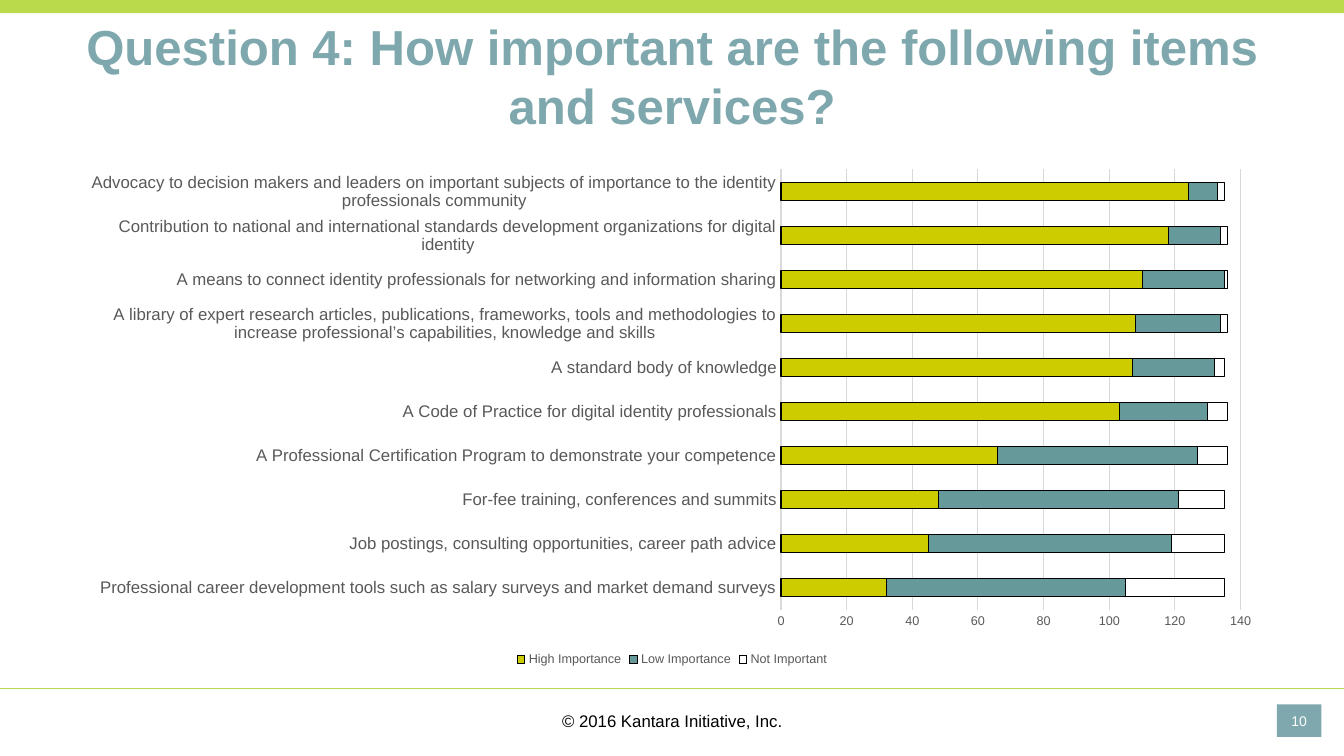
from lxml.etree import SubElement, fromstring
from pptx import Presentation
from pptx.chart.data import CategoryChartData
from pptx.dml.color import RGBColor
from pptx.enum.chart import XL_CHART_TYPE, XL_LEGEND_POSITION, XL_TICK_MARK
from pptx.enum.shapes import MSO_CONNECTOR, MSO_SHAPE
from pptx.enum.text import MSO_ANCHOR, PP_ALIGN
from pptx.oxml.ns import qn
from pptx.util import Cm, Pt

WIDTH, HEIGHT = 33.87, 19.05
LIME, TEAL, GREY, GRID = "BAD94B", "7EA8AD", "595959", "D9D9D9"

# Item, then answers of high, low and no importance, from bottom to top
ANSWERS = [
    ("Professional career development tools such as salary surveys and market demand surveys", 32, 73, 30),
    ("Job postings, consulting opportunities, career path advice", 45, 74, 16),
    ("For-fee training, conferences and summits", 48, 73, 14),
    ("A Professional Certification Program to demonstrate your competence", 66, 61, 9),
    ("A Code of Practice for digital identity professionals", 103, 27, 6),
    ("A standard body of knowledge", 107, 25, 3),
    ("A library of expert research articles, publications, frameworks, tools and methodologies "
     "to increase professional’s capabilities, knowledge and skills", 108, 26, 2),
    ("A means to connect identity professionals for networking and information sharing", 110, 25, 1),
    ("Contribution to national and international standards development organizations "
     "for digital identity", 118, 16, 2),
    ("Advocacy to decision makers and leaders on important subjects of importance "
     "to the identity professionals community", 124, 9, 2),
]
RATINGS = [("High Importance", "CCCC00"), ("Low Importance", "669999"), ("Not Important", "FFFFFF")]
PLOT_AREA = {"x": 0.59, "y": 0.02, "w": 0.38, "h": 0.86}


def rgb(hex_code):
    return RGBColor.from_string(hex_code)


class SlideBuilder:
    font_name = "Arial"

    def __init__(self, slide):
        self.slide = slide
        self.shapes = slide.shapes

    def style_font(self, font, size, color, bold=False):
        font.name, font.size, font.bold = self.font_name, Pt(size), bold
        font.color.rgb = rgb(color)

    def style_line(self, line, color, width):
        line.color.rgb = rgb(color)
        line.width = Pt(width)

    def fill_frame(self, frame, text, size, color, bold=False, inset=None):
        frame.word_wrap = True
        frame.vertical_anchor = MSO_ANCHOR.MIDDLE
        if inset is not None:
            frame.margin_left = frame.margin_right = Cm(inset)
            frame.margin_top = frame.margin_bottom = Cm(inset)
        paragraph = frame.paragraphs[0]
        paragraph.alignment = PP_ALIGN.CENTER
        run = paragraph.add_run()
        run.text = text
        self.style_font(run.font, size, color, bold)

    def bar(self, left, top, width, height, color):
        bar = self.shapes.add_shape(MSO_SHAPE.RECTANGLE, Cm(left), Cm(top), Cm(width), Cm(height))
        bar.shadow.inherit = False
        bar.fill.solid()
        bar.fill.fore_color.rgb = rgb(color)
        bar.line.fill.background()
        return bar

    def text(self, left, top, width, height, text, size, color, bold=False):
        box = self.shapes.add_textbox(Cm(left), Cm(top), Cm(width), Cm(height))
        self.fill_frame(box.text_frame, text, size, color, bold)

    def rule(self, top, color, width):
        rule = self.shapes.add_connector(MSO_CONNECTOR.STRAIGHT, 0, Cm(top), Cm(WIDTH), Cm(top))
        self.style_line(rule.line, color, width)
        SubElement(rule.element.spPr, qn("a:effectLst"))

    def stacked_chart(self, left, top, width, height):
        data = CategoryChartData()
        items, *counts = zip(*ANSWERS)
        data.categories = items
        for (rating, _), values in zip(RATINGS, counts):
            data.add_series(rating, values)
        chart = self.shapes.add_chart(XL_CHART_TYPE.BAR_STACKED, Cm(left), Cm(top),
                                      Cm(width), Cm(height), data).chart
        chart.has_title = False
        self.style_font(chart.font, 10, "000000")
        self.style_bars(chart.plots[0])
        self.style_axes(chart)
        chart.has_legend = True
        chart.legend.position = XL_LEGEND_POSITION.BOTTOM
        chart.legend.include_in_layout = False
        self.style_font(chart.legend.font, 9, GREY)
        self.place_plot(chart)

    def style_bars(self, plot):
        plot.gap_width, plot.overlap = 150, 100
        plot.vary_by_categories = False
        for series, (_, color) in zip(plot.series, RATINGS):
            series.format.fill.solid()
            series.format.fill.fore_color.rgb = rgb(color)
            self.style_line(series.format.line, "000000", 0.75)

    def style_axes(self, chart):
        items, counts = chart.category_axis, chart.value_axis
        for axis, size in ((items, 12), (counts, 9)):
            axis.major_tick_mark = axis.minor_tick_mark = XL_TICK_MARK.NONE
            self.style_font(axis.tick_labels.font, size, GREY)
        self.style_line(items.format.line, GRID, 0.75)
        counts.minimum_scale, counts.maximum_scale, counts.major_unit = 0, 140, 20
        counts.format.line.fill.background()
        counts.has_major_gridlines = True
        self.style_line(counts.major_gridlines.format.line, GRID, 0.75)

    def place_plot(self, chart):
        """Fix the inner plot area as fractions of the chart."""
        plot_area = chart.element.find(".//" + qn("c:plotArea"))
        for automatic in plot_area.findall(qn("c:layout")):
            plot_area.remove(automatic)
        layout = fromstring(f'<c:layout xmlns:c="{plot_area.nsmap["c"]}"><c:manualLayout/></c:layout>')
        settings = {"layoutTarget": "inner", "xMode": "edge", "yMode": "edge", **PLOT_AREA}
        for tag, value in settings.items():
            SubElement(layout[0], qn("c:" + tag)).set("val", str(value))
        plot_area.insert(0, layout)


def main():
    presentation = Presentation()
    presentation.slide_width, presentation.slide_height = Cm(WIDTH), Cm(HEIGHT)
    builder = SlideBuilder(presentation.slides.add_slide(presentation.slide_layouts[6]))
    builder.bar(0, 0, WIDTH, 0.33, LIME)
    builder.rule(17.35, LIME, 0.5)
    builder.text(1.7, 0.43, 30.48, 2.92,
                 "Question 4: How important are the following items and services?", 35.1, TEAL, bold=True)
    builder.stacked_chart(1.7, 4.01, 30.48, 12.9)
    page_number = builder.bar(32.18, 17.75, 1.12, 0.82, TEAL)
    builder.fill_frame(page_number.text_frame, "10", 10, "FFFFFF", inset=0.1)
    builder.text(11.23, 17.65, 11.43, 1.02, "© 2016 Kantara Initiative, Inc.", 12, "000000")
    presentation.save("out.pptx")


if __name__ == "__main__":
    main()
